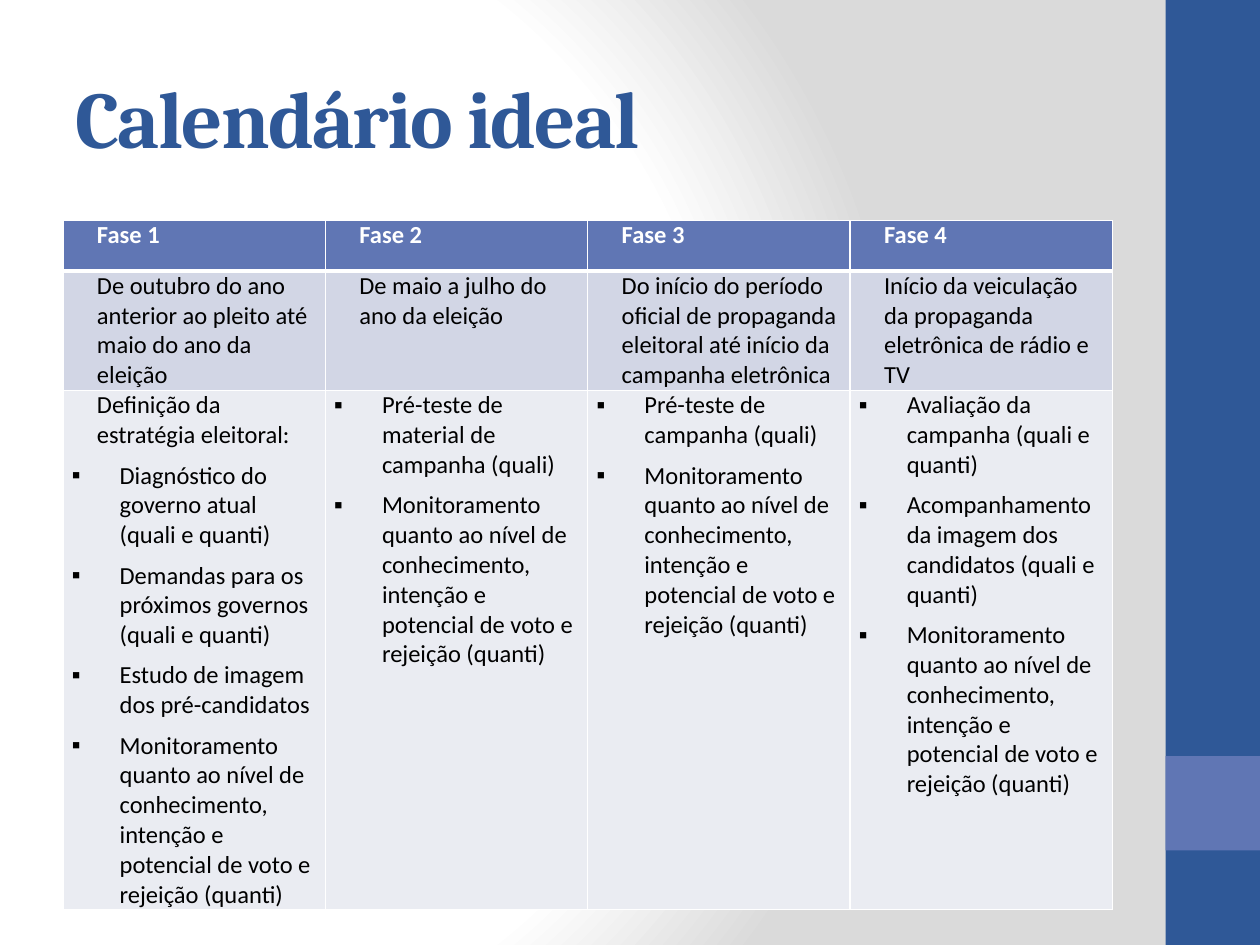
from dataclasses import dataclass

from lxml import etree
from pptx import Presentation, util as u
from pptx.dml.color import RGBColor
from pptx.enum import shapes, text
from pptx.oxml import parse_xml
from pptx.oxml.ns import nsdecls, qn


@dataclass(frozen=True)
class Theme:
    navy: str = "2F5897"
    periwinkle: str = "6076B4"
    period_fill: str = "D2D6E5"
    task_fill: str = "EAECF2"
    white: str = "FFFFFF"
    grey: str = "DADADA"
    black: str = "000000"
    heading_font: str = "Cambria"
    body_font: str = "Calibri"
    title_size: int = 46
    body_size: int = 14


@dataclass(frozen=True)
class Band:
    top: float
    height: float
    color: str


@dataclass(frozen=True)
class Phase:
    name: str
    period: str
    tasks: tuple[str, ...]
    intro: str = ""


THEME = Theme()
MONITORING = (
    "Monitoramento quanto ao nível de conhecimento, intenção e "
    "potencial de voto e rejeição (quanti)"
)
BANDS = (Band(0, 7.5, THEME.navy), Band(6, 0.75, THEME.periwinkle))
PHASES = (
    Phase(
        "Fase 1",
        "De outubro do ano anterior ao pleito até maio do ano da eleição",
        (
            "Diagnóstico do governo atual (quali e quanti)",
            "Demandas para os próximos governos (quali e quanti)",
            "Estudo de imagem dos pré-candidatos",
            MONITORING,
        ),
        intro="Definição da estratégia eleitoral:",
    ),
    Phase(
        "Fase 2",
        "De maio a julho do ano da eleição",
        ("Pré-teste de material de campanha (quali)", MONITORING),
    ),
    Phase(
        "Fase 3",
        "Do início do período oficial de propaganda eleitoral até início da campanha eletrônica",
        ("Pré-teste de campanha (quali)", MONITORING),
    ),
    Phase(
        "Fase 4",
        "Início da veiculação da propaganda eletrônica de rádio e TV",
        (
            "Avaliação da campanha (quali e quanti)",
            "Acompanhamento da imagem dos candidatos (quali e quanti)",
            MONITORING,
        ),
    ),
)
ROW_HEIGHTS = (0.4, 0.95, 4.12)


def paint_background(slide) -> None:
    """Fill the slide with a circular white to grey gradient."""
    stops = "".join(
        f'<a:gs pos="{place * 1000}"><a:srgbClr val="{color}"/></a:gs>'
        for place, color in ((0, THEME.white), (75, THEME.white), (100, THEME.grey))
    )
    background = parse_xml(
        f'<p:bg {nsdecls("p", "a")}><p:bgPr><a:gradFill rotWithShape="1">'
        f'<a:gsLst>{stops}</a:gsLst><a:path path="circle">'
        '<a:fillToRect l="20000" t="50000" r="100000" b="50000"/></a:path>'
        "</a:gradFill><a:effectLst/></p:bgPr></p:bg>"
    )
    slide.shapes._spTree.addprevious(background)


def draw_band(slide, band: Band) -> None:
    """Draw one block of the right-hand side bar."""
    block = slide.shapes.add_shape(
        shapes.MSO_SHAPE.RECTANGLE,
        u.Inches(9.25), u.Inches(band.top), u.Inches(0.75), u.Inches(band.height),
    )
    block.shadow.inherit = False
    block.fill.solid()
    block.fill.fore_color.rgb = RGBColor.from_string(band.color)
    block.line.fill.background()


def write(paragraph, wording: str, *, size: int = THEME.body_size,
          font: str = THEME.body_font, color: str = THEME.black, bold: bool = False,
          align=text.PP_ALIGN.LEFT, left: float = 0, hanging: float = 0,
          after: float = 0, spacing: float = 0, bullet: str = "") -> None:
    """Write one formatted paragraph."""
    run = paragraph.add_run()
    run.text = wording
    run.font.size, run.font.name, run.font.bold = u.Pt(size), font, bold
    run.font.color.rgb = RGBColor.from_string(color)
    if spacing:
        run.font._element.set("spc", str(round(spacing * 100)))
    paragraph.alignment = align
    paragraph.space_after = u.Pt(after)
    layout = paragraph._p.get_or_add_pPr()
    layout.set("marL", str(u.Inches(left)))
    layout.set("indent", str(-u.Inches(hanging)))
    if bullet:
        etree.SubElement(layout, qn("a:buFont"), typeface=font)
        etree.SubElement(layout, qn("a:buChar"), char=bullet)
        tabs = etree.SubElement(layout, qn("a:tabLst"))
        etree.SubElement(tabs, qn("a:tab"), pos=str(u.Inches(0.25)), algn="l")


def style_cell(cell, fill: str, bottom: float = 1, top: float = 1) -> None:
    """Set the insets, white borders and fill of a cell."""
    cell.margin_left = cell.margin_right = u.Inches(0.07)
    cell.margin_top = cell.margin_bottom = 0
    for side, width in (("L", 1), ("R", 1), ("T", top), ("B", bottom)):
        cell._tc.get_or_add_tcPr().append(parse_xml(
            f'<a:ln{side} {nsdecls("a")} w="{u.Pt(width)}"><a:solidFill>'
            f'<a:srgbClr val="{THEME.white}"/></a:solidFill></a:ln{side}>'
        ))
    cell.fill.solid()
    cell.fill.fore_color.rgb = RGBColor.from_string(fill)


def fill_phase(column: int, phase: Phase, calendar) -> None:
    """Fill the column of the calendar that belongs to one phase."""
    header, period, tasks = (calendar.cell(row, column) for row in range(3))
    style_cell(header, THEME.periwinkle, bottom=3)
    style_cell(period, THEME.period_fill, top=3)
    style_cell(tasks, THEME.task_fill)
    plain = dict(left=0.2, after=6)
    bulleted = dict(left=0.38, hanging=0.38, after=6, bullet="▪")
    write(header.text_frame.paragraphs[0], phase.name, color=THEME.white,
          bold=True, align=text.PP_ALIGN.JUSTIFY, **plain)
    write(period.text_frame.paragraphs[0], phase.period, **plain)
    entries = [(phase.intro, plain)] if phase.intro else []
    entries += [(task, bulleted) for task in phase.tasks]
    for index, (wording, layout) in enumerate(entries):
        frame = tasks.text_frame
        write(frame.add_paragraph() if index else frame.paragraphs[0], wording, **layout)


def main() -> None:
    """Build the campaign calendar slide."""
    deck = Presentation()
    deck.slide_width, deck.slide_height = u.Inches(10), u.Inches(7.5)
    slide = deck.slides.add_slide(deck.slide_layouts[6])
    paint_background(slide)
    for band in BANDS:
        draw_band(slide, band)

    title = slide.shapes.add_textbox(
        u.Inches(0.5), u.Inches(0.3), u.Inches(8.33), u.Inches(1.25)
    ).text_frame
    title.word_wrap = True
    title.vertical_anchor = text.MSO_ANCHOR.MIDDLE
    write(title.paragraphs[0], "Calendário ideal", size=THEME.title_size,
          font=THEME.heading_font, color=THEME.navy, bold=True, spacing=-1)

    calendar = slide.shapes.add_table(
        len(ROW_HEIGHTS), len(PHASES),
        u.Inches(0.5), u.Inches(1.75), u.Inches(8.33), u.Inches(sum(ROW_HEIGHTS)),
    ).table
    for row, height in zip(calendar.rows, ROW_HEIGHTS):
        row.height = u.Inches(height)
    for column, phase in enumerate(PHASES):
        fill_phase(column, phase, calendar)
    deck.save("out.pptx")


if __name__ == "__main__":
    main()
